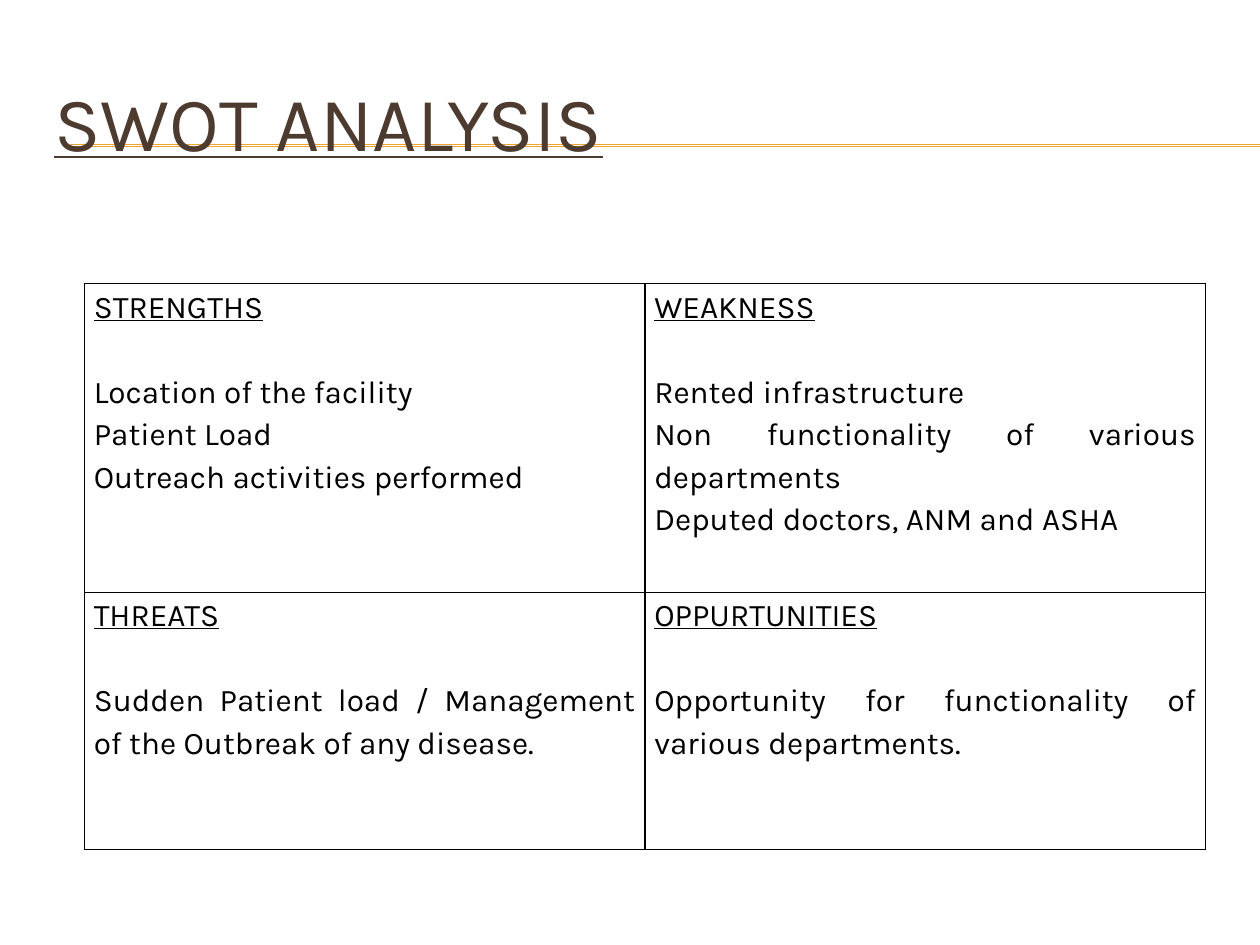
from dataclasses import dataclass

from lxml import etree
from pptx import Presentation
from pptx.dml.color import RGBColor
from pptx.enum.shapes import MSO_CONNECTOR
from pptx.enum.text import MSO_ANCHOR, PP_ALIGN
from pptx.oxml.ns import qn
from pptx.util import Cm, Pt

STRAIGHT = MSO_CONNECTOR.STRAIGHT
MIDDLE, TOP = MSO_ANCHOR.MIDDLE, MSO_ANCHOR.TOP
LEFT, JUSTIFY = PP_ALIGN.LEFT, PP_ALIGN.JUSTIFY

COLORS = {"title": "4E3B30", "rule": "F0A22E", "text": "000000", "border": "000000"}
FONT = "Karla"
TITLE_ONLY = 5
SLIDE_WIDTH, SLIDE_HEIGHT = Cm(25.4), Cm(19.05)
COLUMN_WIDTH = Cm(11.3)
ROW_HEIGHTS = (Cm(6.22), Cm(5.18))
HEADING_GAP = Pt(24.3)


@dataclass
class Quadrant:
    row: int
    column: int
    heading: str
    points: tuple[str, ...]


QUADRANTS = (
    Quadrant(0, 0, "STRENGTHS", (
        "Location of the facility",
        "Patient Load",
        "Outreach activities performed",
    )),
    Quadrant(0, 1, "WEAKNESS", (
        "Rented infrastructure",
        "Non functionality of various departments",
        "Deputed doctors, ANM and ASHA",
    )),
    Quadrant(1, 0, "THREATS", (
        "Sudden Patient load / Management of the Outbreak of any disease.",
    )),
    Quadrant(1, 1, "OPPURTUNITIES", (
        "Opportunity for functionality of various departments.",
    )),
)


def add_text(para, text: str, size: float, color: str, underline: bool) -> None:
    span = para.add_run()
    span.text = text
    span.font.name = FONT
    span.font.size = Pt(size)
    span.font.underline = underline
    span.font.color.rgb = RGBColor.from_string(COLORS[color])


def add_rule(page, top: float) -> None:
    rule = page.shapes.add_connector(STRAIGHT, Cm(1.42), Cm(top), SLIDE_WIDTH, Cm(top))
    rule.line.color.rgb = RGBColor.from_string(COLORS["rule"])
    rule.line.width = Pt(0.75)
    etree.SubElement(rule._element.spPr, qn("a:effectLst"))


def add_title(page, text: str) -> None:
    title = page.shapes.title
    title.left, title.top, title.width, title.height = Cm(0.84), Cm(1.27), Cm(24.13), Cm(2.34)
    title.text_frame.vertical_anchor = MIDDLE
    para = title.text_frame.paragraphs[0]
    para.alignment = LEFT
    add_text(para, text, 44, "title", True)
    # Bring the title in front of the rules
    page.shapes._spTree.append(title._element)


def add_borders(cell) -> None:
    properties = cell._tc.get_or_add_tcPr()
    for position, side in enumerate(("lnL", "lnR", "lnT", "lnB")):
        border = etree.Element(qn(f"a:{side}"), w=str(Pt(1)))
        fill = etree.SubElement(border, qn("a:solidFill"))
        etree.SubElement(fill, qn("a:srgbClr"), val=COLORS["border"])
        properties.insert(position, border)


def fill_cell(cell, quadrant: Quadrant) -> None:
    cell.fill.background()
    cell.margin_left = cell.margin_right = Cm(0.19)
    cell.margin_top = cell.margin_bottom = Cm(0)
    cell.vertical_anchor = TOP
    frame = cell.text_frame
    for index, text in enumerate((quadrant.heading, *quadrant.points)):
        is_heading = index == 0
        para = frame.paragraphs[0] if is_heading else frame.add_paragraph()
        para.alignment = JUSTIFY
        para.line_spacing = 1.15
        para.space_after = HEADING_GAP if is_heading else Pt(0)
        add_text(para, text, 18, "text", is_heading)
    add_borders(cell)


def add_swot_table(page) -> None:
    table = page.shapes.add_table(
        2, 2, Cm(1.7), Cm(5.72), 2 * COLUMN_WIDTH, sum(ROW_HEIGHTS)
    ).table
    table.first_row = table.horz_banding = False
    for column in table.columns:
        column.width = COLUMN_WIDTH
    for row, height in zip(table.rows, ROW_HEIGHTS):
        row.height = height
    for quadrant in QUADRANTS:
        fill_cell(table.cell(quadrant.row, quadrant.column), quadrant)


def main() -> None:
    deck = Presentation()
    deck.slide_width, deck.slide_height = SLIDE_WIDTH, SLIDE_HEIGHT
    page = deck.slides.add_slide(deck.slide_layouts[TITLE_ONLY])

    # Double rule behind the title
    for top in (2.92, 2.95):
        add_rule(page, top)
    add_title(page, "SWOT ANALYSIS")

    # Four quadrants
    add_swot_table(page)
    deck.save("out.pptx")


if __name__ == "__main__":
    main()
